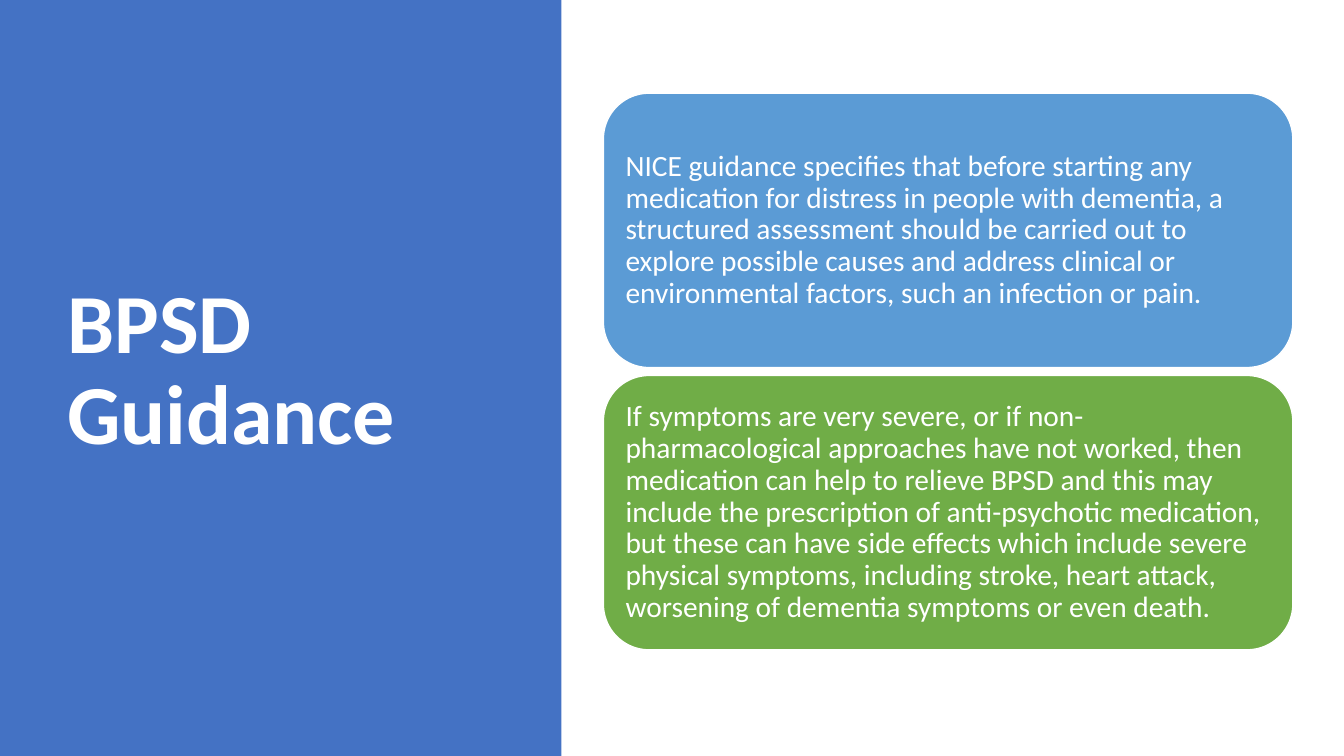
"""Build the BPSD Guidance slide: a title panel beside two stacked cards."""
from pptx import Presentation
from pptx.dml.color import RGBColor
from pptx.enum.shapes import MSO_SHAPE as Shape
from pptx.enum.text import MSO_ANCHOR as Anchor, PP_ALIGN as Align
from pptx.util import Pt

TITLE = "BPSD Guidance"
CARDS = [
    ("NICE guidance specifies that before starting any medication for distress in people "
     "with dementia, a structured assessment should be carried out to explore possible "
     "causes and address clinical or environmental factors, such an infection or pain.",
     "blue"),
    ("If symptoms are very severe, or if non-pharmacological approaches have not worked, "
     "then medication can help to relieve BPSD and this may include the prescription of "
     "anti-psychotic medication, but these can have side effects which include severe "
     "physical symptoms, including stroke, heart attack, worsening of dementia symptoms "
     "or even death.", "green"),
]
THEME = {
    "font": "Calibri",
    "title_size": 60,
    "card_size": 21,
    "panel": RGBColor(0x44, 0x72, 0xC4),
    "blue": RGBColor(0x5B, 0x9B, 0xD5),
    "green": RGBColor(0x70, 0xAD, 0x47),
    "white": RGBColor(0xFF, 0xFF, 0xFF),
}
SLIDE_WIDTH, SLIDE_HEIGHT = 960, 540
PANEL_WIDTH = 401
TITLE_BOX = (41, 49, 299.5, 433.5)
CARD_LEFT, CARD_TOP, CARD_WIDTH, CARD_HEIGHT = 431, 66.6, 492.5, 196
CARD_GAP = 5.6


def set_attributes(target, values):
    for name, value in values.items():
        setattr(target, name, value)


def add_block(slide, kind, box, color):
    shape = slide.shapes.add_shape(kind, *map(Pt, box))
    shape.shadow.inherit = False
    shape.fill.solid()
    shape.fill.fore_color.rgb = color
    shape.line.fill.background()
    return shape


def write_text(shape, text, size, bold, insets):
    frame = shape.text_frame
    horizontal, vertical = map(Pt, insets)
    set_attributes(frame, {
        "word_wrap": True, "vertical_anchor": Anchor.MIDDLE,
        "margin_left": horizontal, "margin_right": horizontal,
        "margin_top": vertical, "margin_bottom": vertical,
    })
    paragraph = frame.paragraphs[0]
    set_attributes(paragraph, {"alignment": Align.LEFT, "line_spacing": 0.9})
    run = paragraph.add_run()
    run.text = text
    set_attributes(run.font, {"name": THEME["font"], "size": Pt(size), "bold": bold})
    run.font.color.rgb = THEME["white"]


def main():
    presentation = Presentation()
    set_attributes(presentation, {"slide_width": Pt(SLIDE_WIDTH), "slide_height": Pt(SLIDE_HEIGHT)})
    slide = presentation.slides.add_slide(presentation.slide_layouts[6])

    add_block(slide, Shape.RECTANGLE, (0, 0, PANEL_WIDTH, SLIDE_HEIGHT), THEME["panel"])
    title = slide.shapes.add_textbox(*map(Pt, TITLE_BOX))
    write_text(title, TITLE, THEME["title_size"], True, (7.2, 3.6))

    for index, (text, color) in enumerate(CARDS):
        top = CARD_TOP + index * (CARD_HEIGHT + CARD_GAP)
        box = (CARD_LEFT, top, CARD_WIDTH, CARD_HEIGHT)
        card = add_block(slide, Shape.ROUNDED_RECTANGLE, box, THEME[color])
        card.line.color.rgb = THEME["white"]
        card.line.width = Pt(1)
        write_text(card, text, THEME["card_size"], False, (6.3, 6.3))

    presentation.save("out.pptx")


if __name__ == "__main__":
    main()
